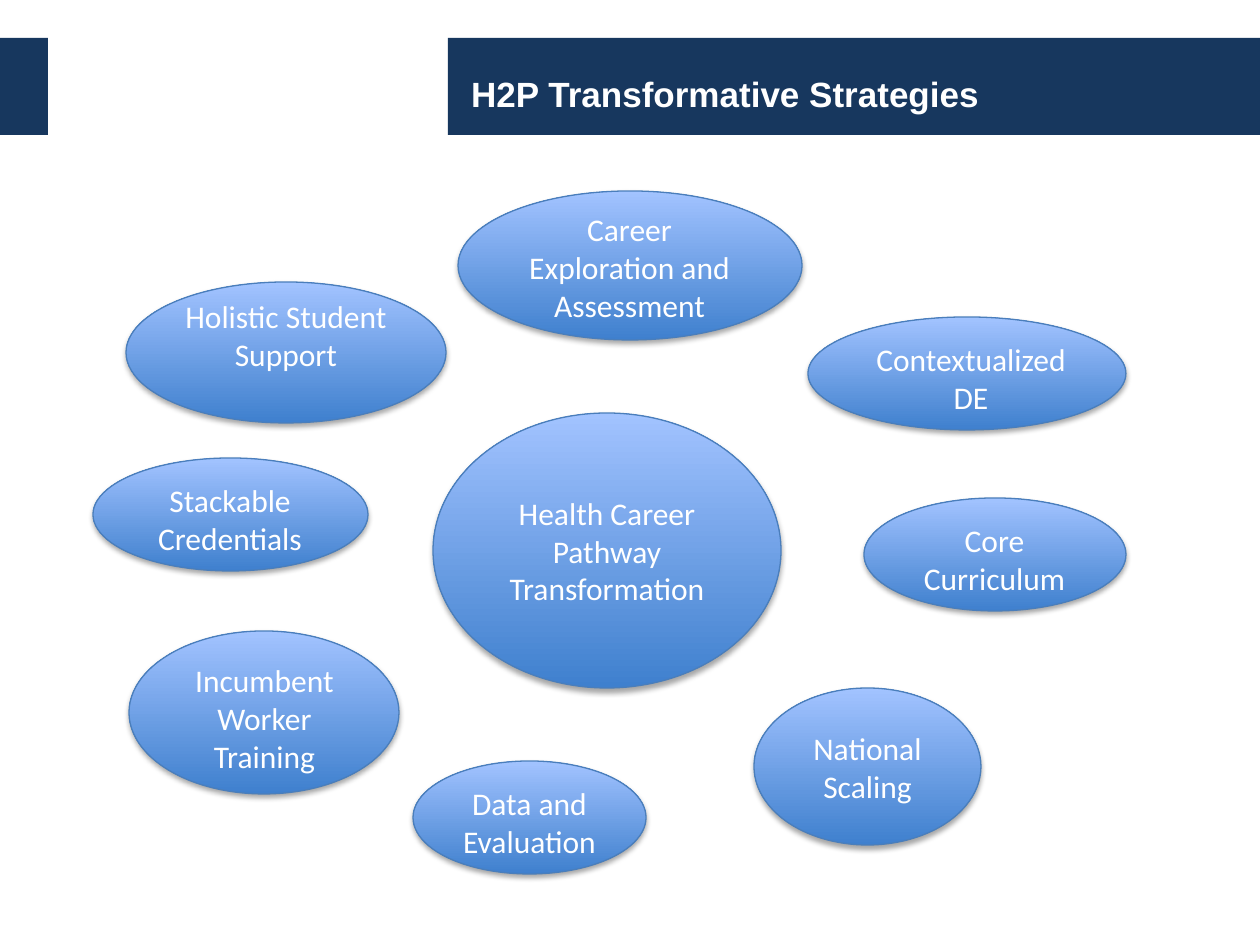
from math import sqrt

from lxml import etree
from pptx import Presentation
from pptx import util as u
from pptx.dml.color import RGBColor
from pptx.enum import shapes, text
from pptx.oxml import ns

PX = u.Inches(1) / 126
NAVY = RGBColor(0x17, 0x37, 0x5E)
WHITE = RGBColor(0xFF, 0xFF, 0xFF)
BLUE_DEEP = RGBColor(0x3F, 0x80, 0xCE)
BLUE_LIGHT = RGBColor(0xA2, 0xC3, 0xFF)
BLUE_EDGE = RGBColor(0x4A, 0x7E, 0xBB)

TWO_LINES, THREE_LINES = 86, 123
INSET = 6

# wording, oval box, text height, options
BUBBLES = [
    ("Health Career Pathway Transformation", (433, 413, 348, 275), THREE_LINES,
     dict(centred=True, inset=0, anchor=text.MSO_ANCHOR.MIDDLE)),
    ("Holistic Student Support", (126, 282, 320, 141), THREE_LINES, dict(centred=True)),
    ("Career Exploration and Assessment", (458, 191, 344, 149), THREE_LINES, dict(centred=True)),
    ("Contextualized DE", (808, 317, 318, 113), TWO_LINES, dict(widen=7)),
    ("Core Curriculum", (864, 498, 262, 113), TWO_LINES, {}),
    ("National Scaling", (754, 688, 227, 157), TWO_LINES,
     dict(centred=True, inset=0, anchor=text.MSO_ANCHOR.MIDDLE)),
    ("Data and Evaluation", (413, 761, 233, 113), TWO_LINES, {}),
    ("Incumbent Worker Training", (129, 631, 270, 163), THREE_LINES, {}),
    ("Stackable Credentials", (93, 458, 275, 113), TWO_LINES, {}),
]


def emu(*lengths):
    return [u.Emu(round(length * PX)) for length in lengths]


def add_label(parent, box, wording, size, font_name, inset, anchor):
    """Add white wrapped text; inset is (horizontal, vertical) in px."""
    label = parent.add_textbox(*emu(*box))
    frame = label.text_frame
    frame.word_wrap = True
    frame.vertical_anchor = anchor
    frame.margin_left = frame.margin_right = emu(inset[0])[0]
    frame.margin_top = frame.margin_bottom = emu(inset[1])[0]
    frame.text = wording
    font = frame.paragraphs[0].runs[0].font
    font.name, font.size = font_name, u.Pt(size)
    font.color.rgb = WHITE
    return frame


def add_soft_shadow(shape):
    shape.shadow.inherit = False
    effects = shape._element.spPr.find(ns.qn("a:effectLst"))
    shadow = etree.SubElement(effects, ns.qn("a:outerShdw"), blurRad="38100",
                              dist="22860", dir="5400000", rotWithShape="0")
    colour = etree.SubElement(shadow, ns.qn("a:srgbClr"), val="000000")
    etree.SubElement(colour, ns.qn("a:alpha"), val="35000")


def add_header(slide, box):
    """Draw the band with a gap near its left end, and the title on it."""
    left, top, width, height = box
    gap_start, gap_end = 48, 448
    for start, end in ((0, gap_start), (gap_end, width)):
        band = slide.shapes.add_shape(shapes.MSO_SHAPE.RECTANGLE,
                                      *emu(left + start, top, end - start, height))
        band.shadow.inherit = False
        band.fill.solid()
        band.fill.fore_color.rgb = NAVY
        band.line.fill.background()
    title = add_label(slide.shapes, (left + gap_end + 11, top, 738, height + 13),
                      "H2P Transformative Strategies", 20, "Arial", (12, 6),
                      text.MSO_ANCHOR.MIDDLE)
    title.paragraphs[0].runs[0].font.bold = True


def add_bubble(slide, box, wording, text_height, centred=False, inset=INSET,
               anchor=text.MSO_ANCHOR.TOP, widen=0):
    """Group an oval with text as wide as the rectangle inscribed in it."""
    left, top, width, height = box
    group = slide.shapes.add_group_shape().shapes
    oval = group.add_shape(shapes.MSO_SHAPE.OVAL, *emu(*box))
    oval.fill.gradient()
    oval.fill.gradient_angle = 90
    for stop, position, colour in zip(oval.fill.gradient_stops, (0, 1),
                                      (BLUE_DEEP, BLUE_LIGHT)):
        stop.position = position
        stop.color.rgb = colour
    oval.line.color.rgb = BLUE_EDGE
    oval.line.width = u.Pt(0.75)
    add_soft_shadow(oval)

    margin = (1 - 1 / sqrt(2)) / 2
    text_left = round(left + margin * width)
    text_width = round(width / sqrt(2)) + widen
    text_top = round(top + ((height - text_height) / 2 if centred else margin * height))
    frame = add_label(group, (text_left, text_top, text_width, text_height),
                      wording, 18, "Calibri", (inset, inset), anchor)
    frame.auto_size = text.MSO_AUTO_SIZE.SHAPE_TO_FIT_TEXT
    frame.paragraphs[0].alignment = text.PP_ALIGN.CENTER


def main():
    deck = Presentation()
    deck.slide_width, deck.slide_height = emu(1260, 945)
    slide = deck.slides.add_slide(deck.slide_layouts[6])
    add_header(slide, (0, 38, 1260, 97))
    for wording, box, text_height, options in BUBBLES:
        add_bubble(slide, box, wording, text_height, **options)
    deck.save("out.pptx")


if __name__ == "__main__":
    main()
